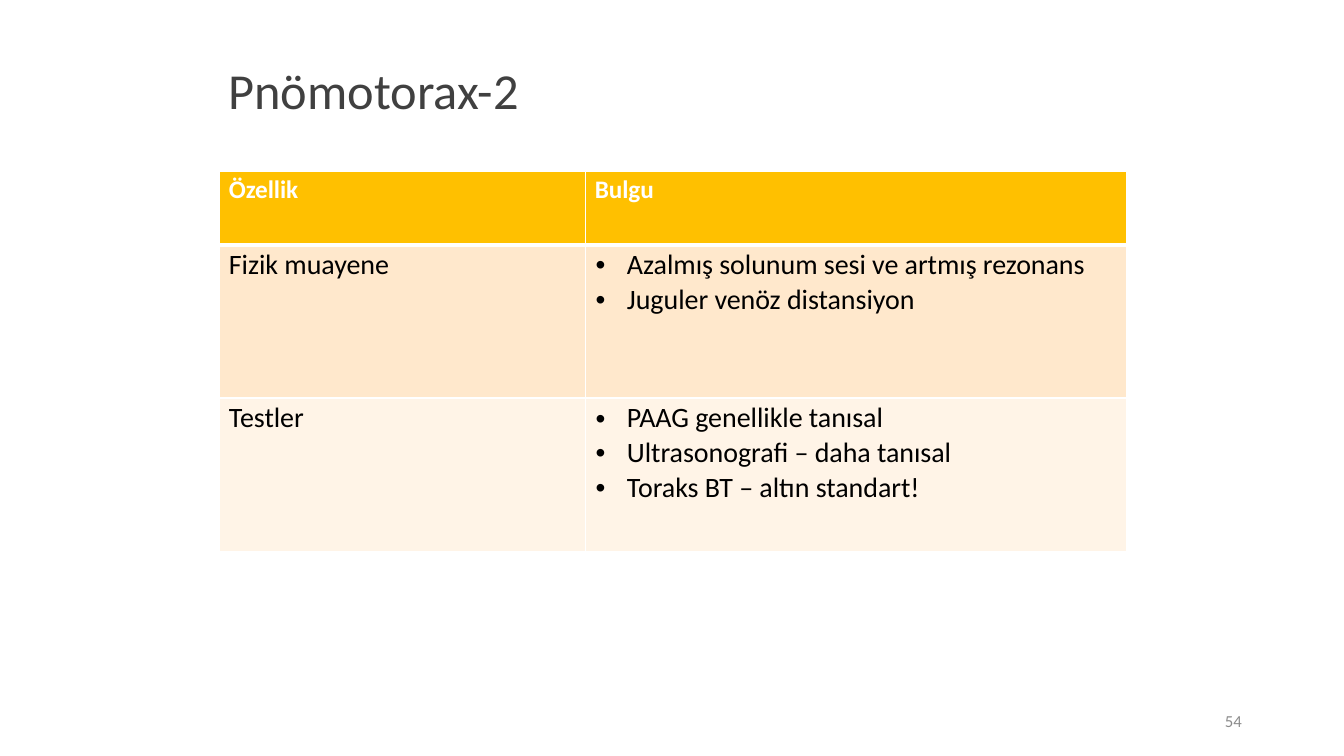
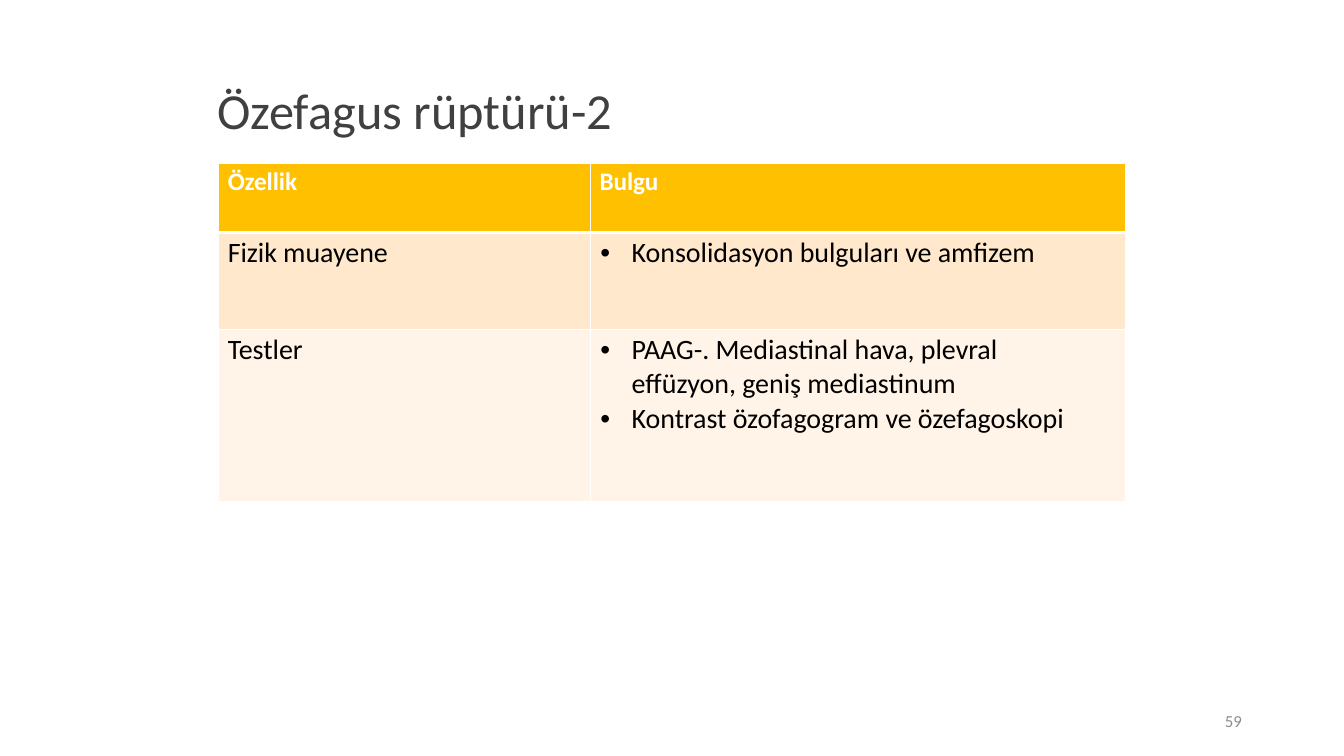
from lxml import etree
from pptx import Presentation
from pptx.dml.color import RGBColor
from pptx.enum.text import MSO_ANCHOR, PP_ALIGN
from pptx.oxml.ns import qn
from pptx.util import Cm, Pt

MIDDLE, TOP = MSO_ANCHOR.MIDDLE, MSO_ANCHOR.TOP
LEFT, RIGHT = PP_ALIGN.LEFT, PP_ALIGN.RIGHT
FONT = "Calibri"
COLORS = {
    "title": "404040",
    "page": "8C8C8C",
    "body": "000000",
    "white": "FFFFFF",
    "header": "FFC000",
    "band_dark": "FFE8CC",
    "band_light": "FFF4E7",
}
ROW_FILLS = ("header", "band_dark", "band_light")
HEADINGS = ("Özellik", "Bulgu")
PAGE_BOX = (23.93, 17.65, 7.62, 1.02)

FINDINGS = [
    {
        "title": "Pnömotorax-2",
        "title_box": (5.51, 0.76, 20.62, 3.18),
        "table_at": (5.54, 4.32),
        "columns": (9.22, 13.64),
        "heights": (1.85, 3.86, 3.86),
        "rows": [
            ("Fizik muayene", ["Azalmış solunum sesi ve artmış rezonans",
                               "Juguler venöz distansiyon"]),
            ("Testler", ["PAAG genellikle tanısal",
                         "Ultrasonografi – daha tanısal",
                         "Toraks BT – altın standart!"]),
        ],
        "page": "54",
    },
    {
        "title": "Özefagus rüptürü-2",
        "title_box": (5.23, 1.02, 23, 3.68),
        "table_at": (5.51, 4.11),
        "columns": (9.37, 13.49),
        "heights": (1.75, 2.44, 4.34),
        "rows": [
            ("Fizik muayene", ["Konsolidasyon bulguları ve amfizem"]),
            ("Testler", ["PAAG-. Mediastinal hava, plevral\veffüzyon, geniş mediastinum",
                         "Kontrast özofagogram ve özefagoskopi"]),
        ],
        "page": "59",
    },
]


def write(frame, lines, size, color, bold=False, align=LEFT, line_spacing=1.0,
          indent=0, hanging=0, bullet=False, tracking=0):
    """Fill a text frame with one formatted paragraph per line."""
    frame.word_wrap = True
    for index, line in enumerate(lines):
        paragraph = frame.paragraphs[0] if index == 0 else frame.add_paragraph()
        properties = paragraph._p.get_or_add_pPr()
        properties.set("marL", str(Cm(indent)))
        properties.set("indent", str(-Cm(hanging)))
        if bullet:
            etree.SubElement(properties, qn("a:buFont")).set("typeface", "Arial")
            etree.SubElement(properties, qn("a:buChar")).set("char", "•")
        paragraph.alignment = align
        paragraph.line_spacing = line_spacing
        if index:
            paragraph.space_before = Pt(0.4)
        paragraph.text = line
        for run in paragraph.runs:
            run.font.name = FONT
            run.font.size = Pt(size)
            run.font.bold = bold
            run.font.color.rgb = RGBColor.from_string(COLORS[color])
            if tracking:
                run.font._element.set("spc", str(tracking))


def add_label(slide, box, text, **style):
    """Place a vertically centred text box."""
    frame = slide.shapes.add_textbox(*map(Cm, box)).text_frame
    frame.vertical_anchor = MIDDLE
    write(frame, [text], **style)


def style_cell(cell, fill, borders):
    """Set the margins, white borders and fill of a cell."""
    cell.margin_left = cell.margin_right = cell.margin_bottom = 0
    cell.margin_top = Cm(0.08)
    cell.vertical_anchor = TOP
    properties = cell._tc.get_or_add_tcPr()
    for side, width in borders.items():
        line = etree.SubElement(properties, qn(f"a:ln{side}"), w=str(Pt(width)))
        paint = etree.SubElement(line, qn("a:solidFill"))
        etree.SubElement(paint, qn("a:srgbClr"), val=COLORS["white"])
    cell.fill.solid()
    cell.fill.fore_color.rgb = RGBColor.from_string(COLORS[fill])


def add_findings_table(slide, left, top, columns, heights, rows):
    """Build the table of features and findings."""
    table = slide.shapes.add_table(
        len(heights), len(columns), Cm(left), Cm(top),
        Cm(sum(columns)), Cm(sum(heights))).table
    table.horz_banding = False
    for column, width in zip(table.columns, columns):
        column.width = Cm(width)
    for index, (row, height, fill) in enumerate(zip(table.rows, heights, ROW_FILLS)):
        row.height = Cm(height)
        borders = {"L": 1, "R": 1, "T": 3 if index == 1 else 1, "B": 3 if index == 0 else 1}
        for cell in row.cells:
            style_cell(cell, fill, borders)
    for column, heading in enumerate(HEADINGS):
        write(table.cell(0, column).text_frame, [heading], 18, "white",
              bold=True, indent=0.23, tracking=-5)
    for index, (feature, findings) in enumerate(rows, 1):
        write(table.cell(index, 0).text_frame, [feature], 20, "body",
              indent=0.23, tracking=-5)
        write(table.cell(index, 1).text_frame, findings, 20, "body",
              indent=1.04, hanging=0.79, bullet=True, tracking=-5)


def add_findings_slide(deck, content):
    """Add a slide with a title, a findings table and a page number."""
    slide = deck.slides.add_slide(deck.slide_layouts[6])
    add_label(slide, content["title_box"], content["title"],
              size=36, color="title", line_spacing=0.9)
    add_findings_table(slide, *content["table_at"], content["columns"],
                       content["heights"], content["rows"])
    add_label(slide, PAGE_BOX, content["page"], size=12, color="page", align=RIGHT)


def main():
    """Build and save the deck."""
    deck = Presentation()
    deck.slide_width, deck.slide_height = Cm(33.87), Cm(19.05)
    for content in FINDINGS:
        add_findings_slide(deck, content)
    deck.save("out.pptx")


if __name__ == "__main__":
    main()
